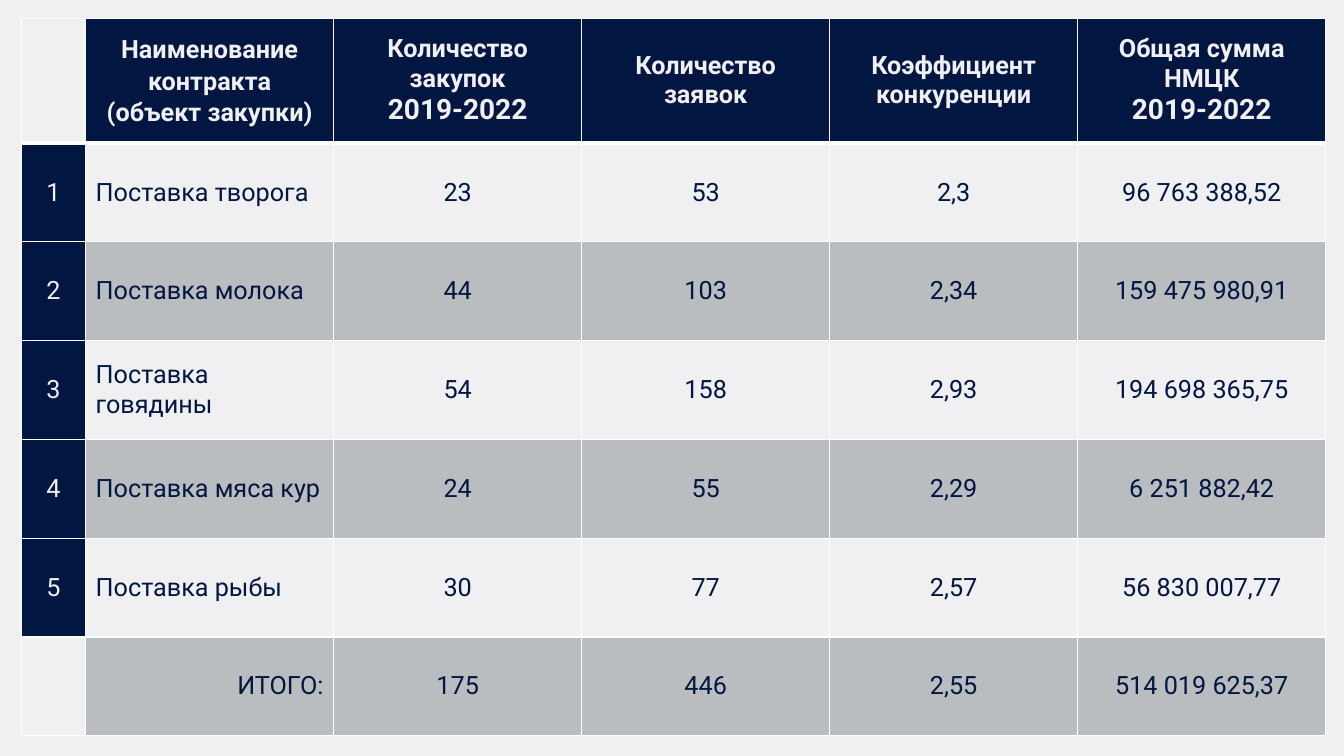
from lxml.etree import SubElement
from pptx import Presentation
from pptx.dml.color import RGBColor
from pptx.enum.text import MSO_ANCHOR, PP_ALIGN
from pptx.oxml.ns import qn
from pptx.util import Inches, Pt

NAVY, PALE, GREY, WHITE = "011640", "F0F0F2", "BABDBF", "FFFFFF"

COLUMN_WIDTHS = [0.64] + [2.46] * 5
ROW_HEIGHTS = [1.24] + [0.98] * 6

# Each heading is a list of (line, size) pairs and a line spacing.
HEADINGS = [
    ([], None),
    ([("Наименование контракта", 18), ("(объект закупки)", 18)], 1.07),
    ([("Количество закупок", 18), ("2019-2022", 20)], None),
    ([("Количество заявок", 18)], None),
    ([("Коэффициент конкуренции", 18)], None),
    ([("Общая сумма НМЦК", 18), ("2019-2022", 20)], None),
]
CONTRACTS = [
    ("1", "Поставка творога", "23", "53", "2,3", "96 763 388,52"),
    ("2", "Поставка молока", "44", "103", "2,34", "159 475 980,91"),
    ("3", "Поставка говядины", "54", "158", "2,93", "194 698 365,75"),
    ("4", "Поставка мяса кур", "24", "55", "2,29", "6 251 882,42"),
    ("5", "Поставка рыбы", "30", "77", "2,57", "56 830 007,77"),
    ("", "ИТОГО:", "175", "446", "2,55", "514 019 625,37"),
]


def rgb(color):
    return RGBColor.from_string(color)


def write_text(frame, lines, color=NAVY, bold=False, align=PP_ALIGN.CENTER, spacing=None):
    """Write one paragraph for each (line, size) pair."""
    for index, (line, size) in enumerate(lines):
        paragraph = frame.add_paragraph() if index else frame.paragraphs[0]
        paragraph.alignment = align
        if spacing:
            paragraph.line_spacing = spacing
        run = paragraph.add_run()
        run.text = line
        run.font.name = "Roboto"
        run.font.size = Pt(size)
        run.font.bold = bold
        run.font.color.rgb = rgb(color)


def draw_borders(cell, top=1, bottom=1):
    properties = cell._tc.get_or_add_tcPr()
    for side, width in (("L", 1), ("R", 1), ("T", top), ("B", bottom)):
        line = SubElement(properties, qn(f"a:ln{side}"), w=str(Pt(width)))
        fill = SubElement(line, qn("a:solidFill"))
        SubElement(fill, qn("a:srgbClr"), val=WHITE)


def fill_cell(cell, color=None):
    """Fill the cell, or leave it clear when there is no colour."""
    cell.vertical_anchor = MSO_ANCHOR.MIDDLE
    if color:
        cell.fill.solid()
        cell.fill.fore_color.rgb = rgb(color)
    else:
        cell.fill.background()


def add_contract_table(slide):
    table = slide.shapes.add_table(
        len(ROW_HEIGHTS), len(COLUMN_WIDTHS), Inches(0.21), Inches(0.18),
        Inches(sum(COLUMN_WIDTHS)), Inches(sum(ROW_HEIGHTS))).table
    for column, width in zip(table.columns, COLUMN_WIDTHS):
        column.width = Inches(width)
    for row, height in zip(table.rows, ROW_HEIGHTS):
        row.height = Inches(height)
    return table


def fill_headings(table):
    for column, (lines, spacing) in enumerate(HEADINGS):
        cell = table.cell(0, column)
        draw_borders(cell, bottom=3)
        fill_cell(cell, NAVY if lines else None)
        write_text(cell.text_frame, lines, color=PALE, bold=True, spacing=spacing)


def fill_contracts(table):
    for row, contract in enumerate(CONTRACTS, start=1):
        is_total = row == len(CONTRACTS)
        band = PALE if row % 2 else GREY
        name_align = PP_ALIGN.RIGHT if is_total else PP_ALIGN.LEFT
        for column, value in enumerate(contract):
            cell = table.cell(row, column)
            draw_borders(cell, top=3 if row == 1 else 1)
            if not value:
                fill_cell(cell)
                continue
            is_number = column == 0
            fill_cell(cell, NAVY if is_number else band)
            write_text(cell.text_frame, [(value, 18)],
                       color=PALE if is_number else NAVY,
                       align=name_align if column == 1 else PP_ALIGN.CENTER)


def main():
    presentation = Presentation()
    presentation.slide_width = Inches(13.33)
    presentation.slide_height = Inches(7.5)
    slide = presentation.slides.add_slide(presentation.slide_layouts[6])
    slide.background.fill.solid()
    slide.background.fill.fore_color.rgb = rgb(PALE)
    table = add_contract_table(slide)
    fill_headings(table)
    fill_contracts(table)
    presentation.save("out.pptx")


if __name__ == "__main__":
    main()
